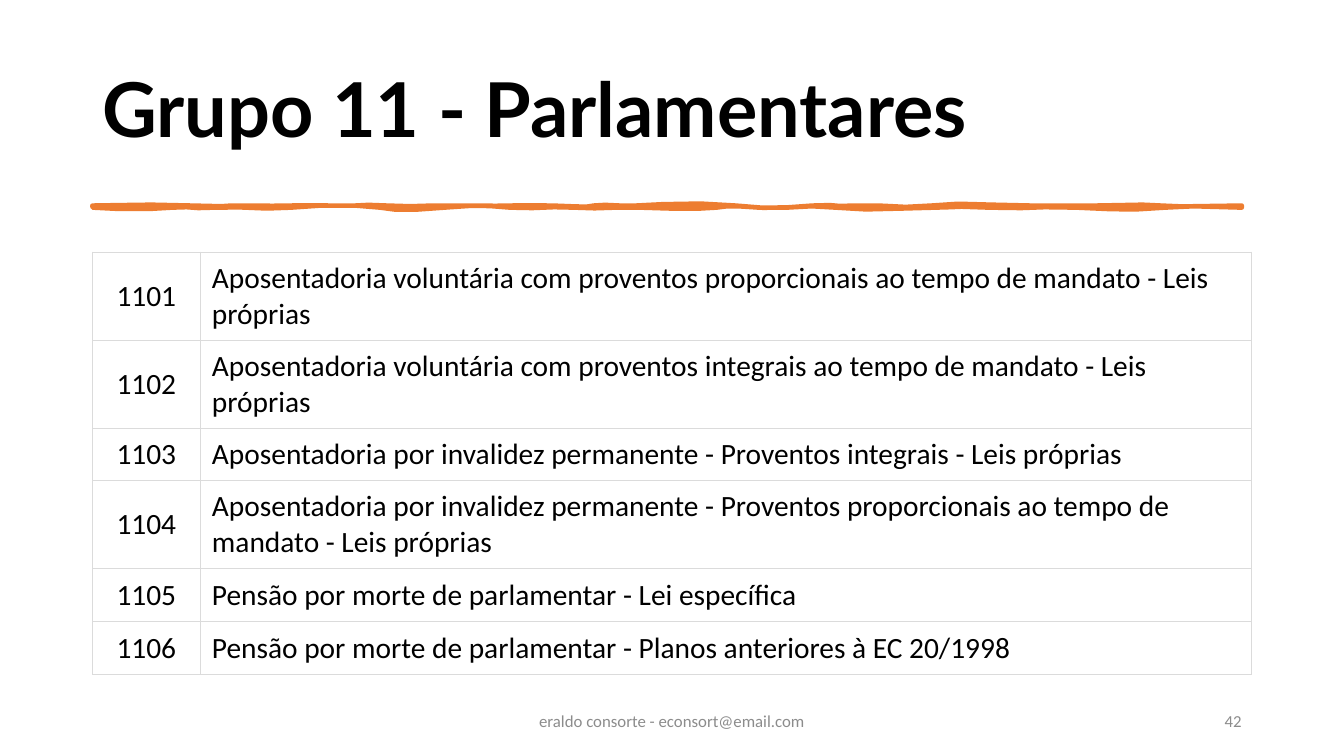
"""Build the slide listing the benefit codes of group 11."""
import lxml.etree
import pptx
import pptx.dml.color
import pptx.enum.text
import pptx.oxml.ns
import pptx.util

ALIGN = pptx.enum.text.PP_ALIGN
MIDDLE = pptx.enum.text.MSO_ANCHOR.MIDDLE
Inches = pptx.util.Inches
WIDTH, HEIGHT = 40 / 3, 7.5
MARGIN = 11 / 12
CONTENT = WIDTH - 2 * MARGIN
CODE_COLUMN = 1.07
TABLE_HEIGHT, LINE_HEIGHT = 4.19, 0.35
STROKE_TOP, STROKE_BOTTOM = 2.04, 2.06

BENEFITS = [
    ("1101", "Aposentadoria voluntária com proventos proporcionais ao tempo de mandato - Leis próprias", 2),
    ("1102", "Aposentadoria voluntária com proventos integrais ao tempo de mandato - Leis próprias", 2),
    ("1103", "Aposentadoria por invalidez permanente - Proventos integrais - Leis próprias", 1),
    ("1104", "Aposentadoria por invalidez permanente - Proventos proporcionais ao tempo de mandato - Leis próprias", 2),
    ("1105", "Pensão por morte de parlamentar - Lei específica", 1),
    ("1106", "Pensão por morte de parlamentar - Planos anteriores à EC 20/1998", 1),
]

# Each wave: first control x and rise, second control x and rise, end x; rises in hundredths.
TOP_WAVES = [
    (1.19, 0, 1.44, -2, 1.9), (2.37, 2, 2.2, -1, 2.44), (2.67, 1, 3.03, -1, 3.31),
    (3.6, 1, 3.59, -2, 3.84), (4.1, 2, 4.23, -1, 4.6), (4.98, 1, 5.14, -1, 5.48),
    (5.81, 1, 5.81, 2, 5.89), (5.98, -2, 6.15, 1, 6.31), (6.47, -1, 7.01, -4, 7.3),
    (7.59, 4, 7.81, 2, 8.06), (8.31, -2, 8.27, 2, 8.48), (8.68, -2, 9.01, 4, 9.24),
    (9.47, -4, 9.82, 0, 10.23), (10.63, 0, 10.63, 0, 10.87), (11.12, 0, 11.36, -2, 11.52),
    (11.68, 2, 12.03, 0, 12.32),
]
BOTTOM_WAVES = [
    (12.05, 0, 11.89, -3, 11.56), (11.22, 3, 11.1, 2, 10.68), (10.27, -2, 10.23, 2, 9.81),
    (9.39, -2, 9.52, 0, 9.28), (9.04, 0, 8.51, 4, 8.29), (8.06, -4, 7.82, 2, 7.53),
    (7.24, -2, 7.25, -2, 7.11), (6.98, 2, 6.61, 1, 6.35), (6.09, -1, 5.9, 2, 5.7),
    (5.51, -2, 5.28, 2, 5.06), (4.83, -2, 4.73, -3, 4.41), (4.09, 3, 3.9, 3, 3.77),
    (3.63, -3, 3.1, -3, 2.89), (2.68, 3, 2.35, -2, 2.13), (1.92, 2, 1.89, -2, 1.71),
    (1.54, 2, 1.14, 2, 0.92),
]


def color(value):
    """Return the colour of a hex string."""
    return pptx.dml.color.RGBColor.from_string(value)


def format_text(frame, size, font, value, align, bold=False):
    """Format the only paragraph of a text frame."""
    frame.word_wrap = True
    paragraph = frame.paragraphs[0]
    paragraph.alignment = align
    for run in paragraph.runs:
        run.font.size = pptx.util.Pt(size)
        run.font.name = font
        run.font.bold = bold
        run.font.color.rgb = color(value)


def add_text(slide, text, box, size, font, value, align, bold=False):
    """Add a vertically centred text box and return its paragraph."""
    frame = slide.shapes.add_textbox(*map(Inches, box)).text_frame
    frame.text = text
    frame.vertical_anchor = MIDDLE
    format_text(frame, size, font, value, align, bold)
    return frame.paragraphs[0]


def add_footer(slide, text, left, width, align):
    """Add a grey footer text."""
    box = (left, 6.95, width, 0.4)
    paragraph = add_text(slide, text, box, 12, "Calibri", "8C8C8C", align)
    paragraph.space_after = pptx.util.Pt(6)


def trace_edge(start, base, waves, steps=3):
    """Return points along the cubic waves of one edge."""
    points = [(Inches(start), Inches(base))]
    for first, first_rise, second, second_rise, end in waves:
        for step in range(1, steps + 1):
            t = step / steps
            u = 1 - t
            x = u**3 * start + 3 * u * u * t * first + 3 * u * t * t * second + t**3 * end
            rise = 3 * u * u * t * first_rise + 3 * u * t * t * second_rise
            points.append((Inches(x), Inches(base + rise / 100)))
        start = end
    return points


def add_brush_stroke(slide, value):
    """Draw the wavy rule under the title."""
    points = trace_edge(MARGIN, STROKE_TOP, TOP_WAVES)
    points += trace_edge(TOP_WAVES[-1][-1], STROKE_BOTTOM, BOTTOM_WAVES)
    builder = slide.shapes.build_freeform(*points[0])
    builder.add_line_segments(points[1:], close=True)
    stroke = builder.convert_to_shape()
    stroke.shadow.inherit = False
    stroke.fill.solid()
    stroke.fill.fore_color.rgb = color(value)
    stroke.line.color.rgb = color(value)
    stroke.line.width = pptx.util.Pt(3.25)
    outline = stroke.line.fill._xPr
    lxml.etree.SubElement(outline, pptx.oxml.ns.qn("a:round"))


def add_borders(cell, value, points):
    """Give a cell a thin line on all four sides."""
    properties = cell._tc.get_or_add_tcPr()
    qn = pptx.oxml.ns.qn
    for side in "LRTB":
        line = lxml.etree.SubElement(properties, qn(f"a:ln{side}"), w=str(int(pptx.util.Pt(points))))
        fill = lxml.etree.SubElement(line, qn("a:solidFill"))
        lxml.etree.SubElement(fill, qn("a:srgbClr"), val=value)


def format_cell(cell, text, align):
    """Write and format one table cell."""
    cell.text = text
    cell.vertical_anchor = MIDDLE
    cell.margin_left = cell.margin_right = pptx.util.Pt(8.4)
    cell.margin_top = cell.margin_bottom = pptx.util.Pt(4.2)
    format_text(cell.text_frame, 21, "Calibri", "000000", align)
    add_borders(cell, "DBDBDB", 0.5)
    cell.fill.solid()
    cell.fill.fore_color.rgb = color("FFFFFF")


def add_benefit_table(slide, top):
    """Add the table of codes and benefits."""
    line_total = sum(lines for _, _, lines in BENEFITS)
    padding = (TABLE_HEIGHT - LINE_HEIGHT * line_total) / len(BENEFITS)
    box = map(Inches, (MARGIN, top, CONTENT, TABLE_HEIGHT))
    table = slide.shapes.add_table(len(BENEFITS), 2, *box).table
    table.first_row = table.horz_banding = False
    table.columns[0].width = Inches(CODE_COLUMN)
    table.columns[1].width = Inches(CONTENT - CODE_COLUMN)
    for index, (code, benefit, lines) in enumerate(BENEFITS):
        table.rows[index].height = Inches(padding + LINE_HEIGHT * lines)
        format_cell(table.cell(index, 0), code, ALIGN.CENTER)
        format_cell(table.cell(index, 1), benefit, ALIGN.LEFT)


def main():
    """Build and save the slide."""
    presentation = pptx.Presentation()
    presentation.slide_width, presentation.slide_height = Inches(WIDTH), Inches(HEIGHT)
    slide = presentation.slides.add_slide(presentation.slide_layouts[6])
    title_box = (MARGIN, 0.4, CONTENT, 1.45)
    title = add_text(slide, "Grupo 11 - Parlamentares", title_box, 54, "Lato", "000000", ALIGN.LEFT, True)
    title.line_spacing = 0.9
    add_brush_stroke(slide, "ED7D31")
    add_footer(slide, "eraldo consorte - econsort@email.com", (WIDTH - 4.5) / 2, 4.5, ALIGN.CENTER)
    add_footer(slide, "42", WIDTH - MARGIN - 3, 3, ALIGN.RIGHT)
    add_benefit_table(slide, HEIGHT / 3)
    presentation.save("out.pptx")


if __name__ == "__main__":
    main()
